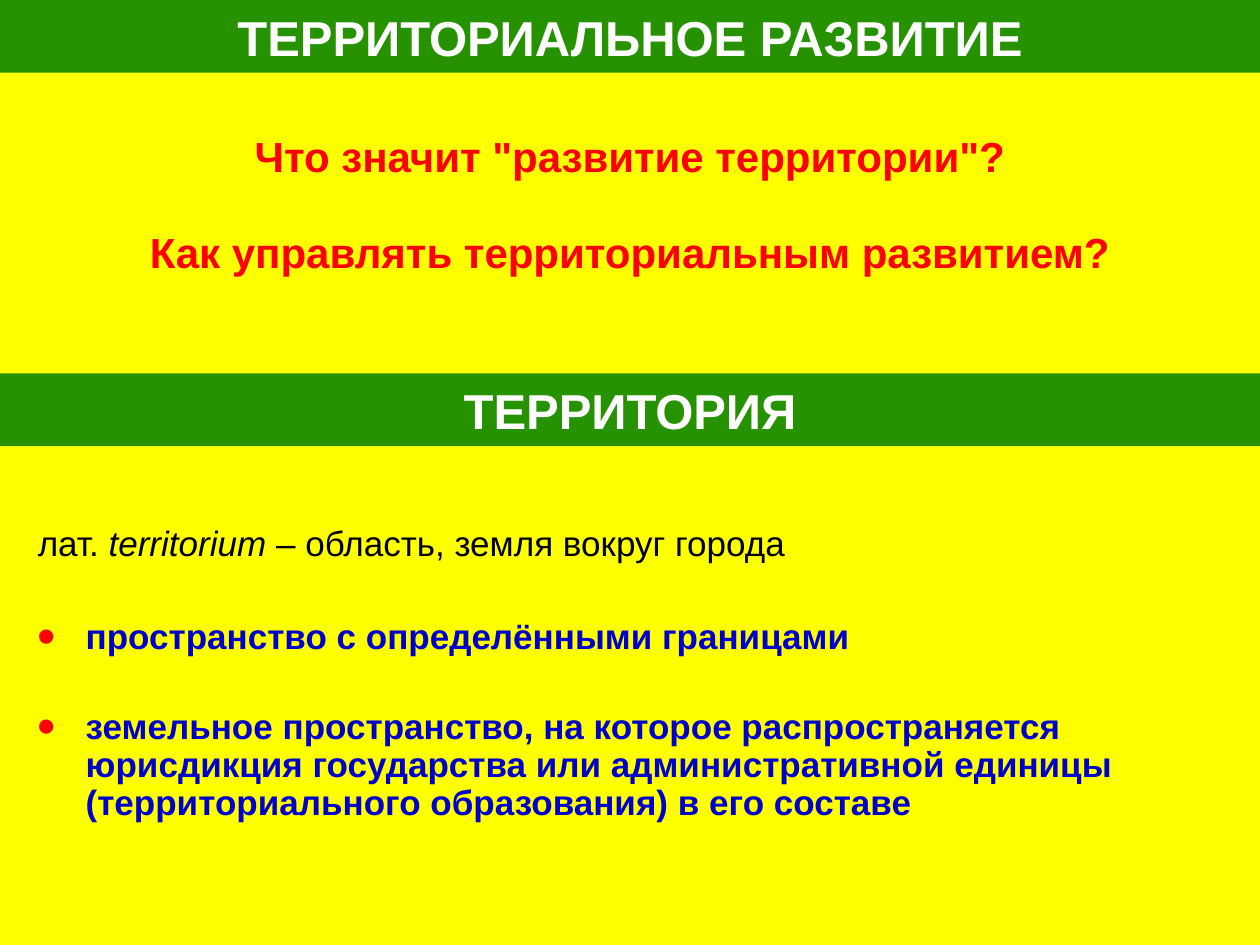
from lxml import etree
from pptx import Presentation
from pptx import util as u
from pptx.dml.color import RGBColor
from pptx.enum import shapes, text
from pptx.oxml import ns

GREEN = RGBColor(0, 128, 0)
YELLOW = RGBColor(255, 255, 0)
WHITE = RGBColor(255, 255, 255)
BLACK = RGBColor(0, 0, 0)
RED = RGBColor(255, 0, 0)
BLUE = RGBColor(0, 0, 204)

deck = Presentation()
deck.slide_width, deck.slide_height = u.Inches(10), u.Inches(7.5)
wide, high = deck.slide_width, deck.slide_height
slide = deck.slides.add_slide(deck.slide_layouts[1])
slide.background.fill.solid()
slide.background.fill.fore_color.rgb = YELLOW


def place(box, left, top, width, height):
    box.left, box.top = int(left * wide), int(top * high)
    box.width, box.height = int(width * wide), int(height * high)
    box.text_frame.word_wrap = True
    box.text_frame.auto_size = text.MSO_AUTO_SIZE.NONE


def style(line, size, color, bold):
    for run in line.runs:
        run.font.name, run.font.size = "Arial", u.Pt(size)
        run.font.bold, run.font.color.rgb = bold, color


title, body = slide.placeholders
asks = slide.shapes.add_textbox(0, 0, wide, high)
band = slide.shapes.add_shape(shapes.MSO_SHAPE.RECTANGLE, 0, 0, wide, high)
band.shadow.inherit = False
band.line.fill.background()

bars = [(title, 0.395, "ТЕРРИТОРИЯ"), (band, 0, "ТЕРРИТОРИАЛЬНОЕ РАЗВИТИЕ")]
for bar, top, words in bars:
    place(bar, 0, top, 1, 0.077)
    bar.fill.solid()
    bar.fill.fore_color.rgb = GREEN
    tint = bar.element.xpath("./p:spPr/a:solidFill/a:srgbClr")[0]
    etree.SubElement(tint, ns.qn("a:alpha"), val="85000")
    frame = bar.text_frame
    frame.text = words
    frame.vertical_anchor = text.MSO_ANCHOR.MIDDLE
    frame.paragraphs[0].alignment = text.PP_ALIGN.CENTER
    style(frame.paragraphs[0], 28, WHITE, True)

place(asks, 0.02, 0.132, 0.96, 0.168)
asks.text_frame.text = 'Что значит "развитие территории"?\nКак управлять территориальным развитием?'
for line, gap in zip(asks.text_frame.paragraphs, (3, 23)):
    line.alignment = text.PP_ALIGN.CENTER
    line.space_before, line.space_after = u.Pt(gap), u.Pt(3)
    style(line, 24, RED, True)

place(body, 0.02, 0.545, 0.96, 0.375)
frame = body.text_frame
frame.text = "лат. "
lead = frame.paragraphs[0]
lead.add_run().text = "territorium"
lead.add_run().text = " – область, земля вокруг города"
lead.space_before = u.Pt(4.6)
style(lead, 20, BLACK, False)
lead.runs[1].font.italic = True
etree.SubElement(lead._p.get_or_add_pPr(), ns.qn("a:buNone"))

facts = [
    (32, "пространство с определёнными границами"),
    (30, "земельное пространство, на которое распространяется "
         "юрисдикция государства или административной "
         "единицы (территориального образования) в его составе"),
]
for gap, words in facts:
    line = frame.add_paragraph()
    line.text = words
    line.line_spacing, line.space_before = 0.9, u.Pt(gap)
    style(line, 20, BLUE, True)
    props = line._p.get_or_add_pPr()
    hue = etree.SubElement(props, ns.qn("a:buClr"))
    etree.SubElement(hue, ns.qn("a:srgbClr"), val=str(RED))
    etree.SubElement(props, ns.qn("a:buSzPct"), val="150000")
    etree.SubElement(props, ns.qn("a:buChar"), char="•")

for line in frame.paragraphs:
    props = line._p.get_or_add_pPr()
    props.set("marL", str(u.Inches(0.38)))
    props.set("indent", str(-u.Inches(0.38)))

deck.save("out.pptx")
